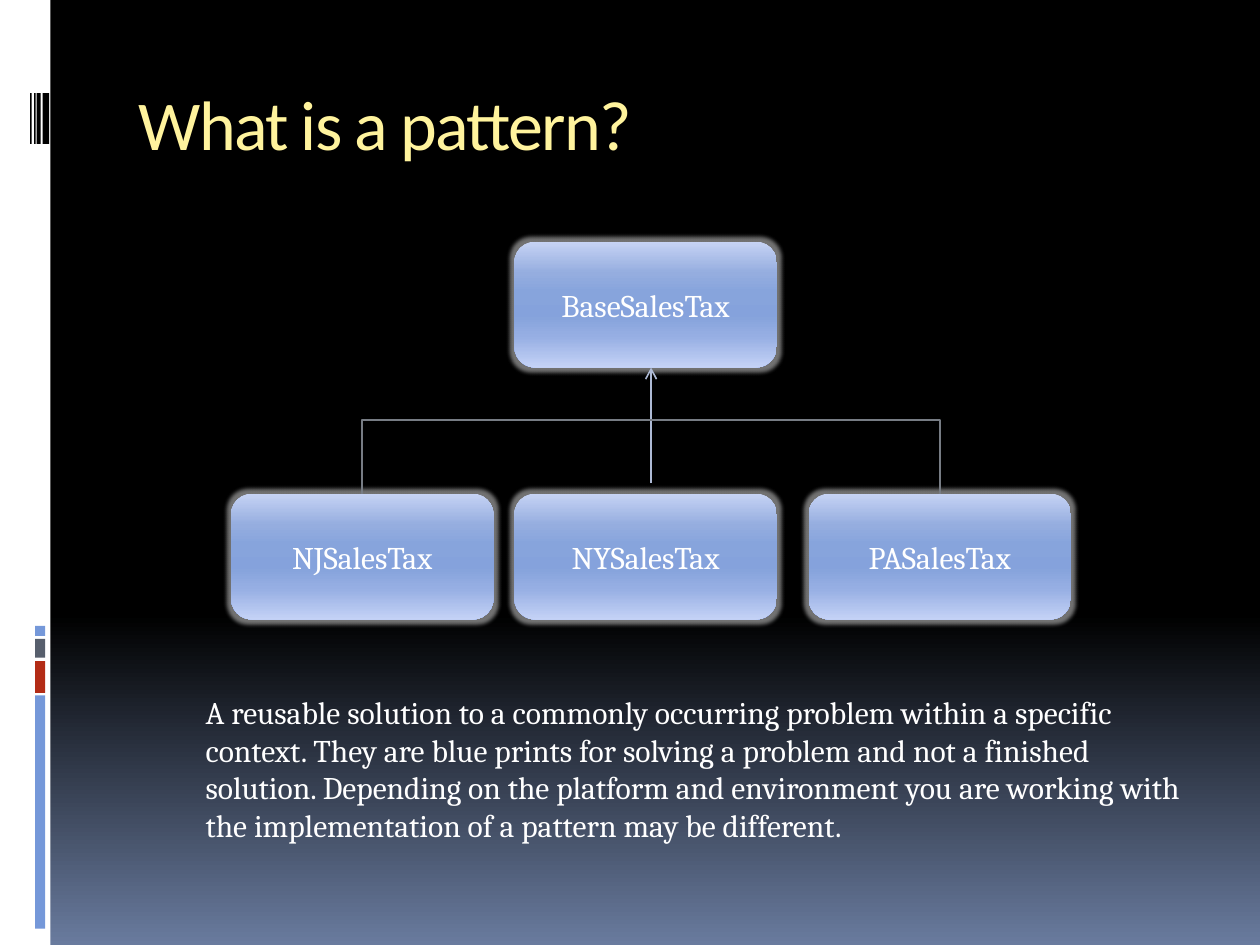
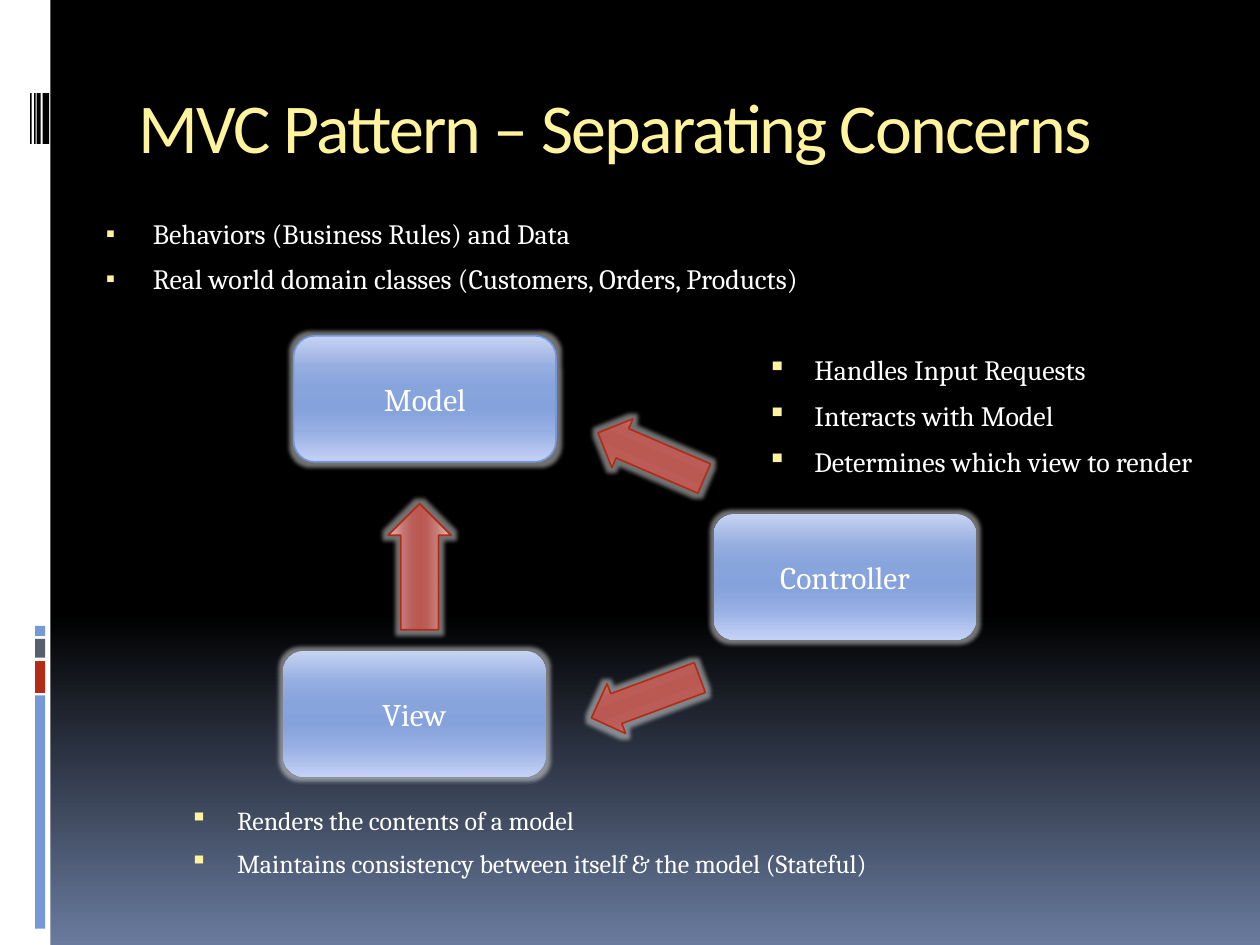
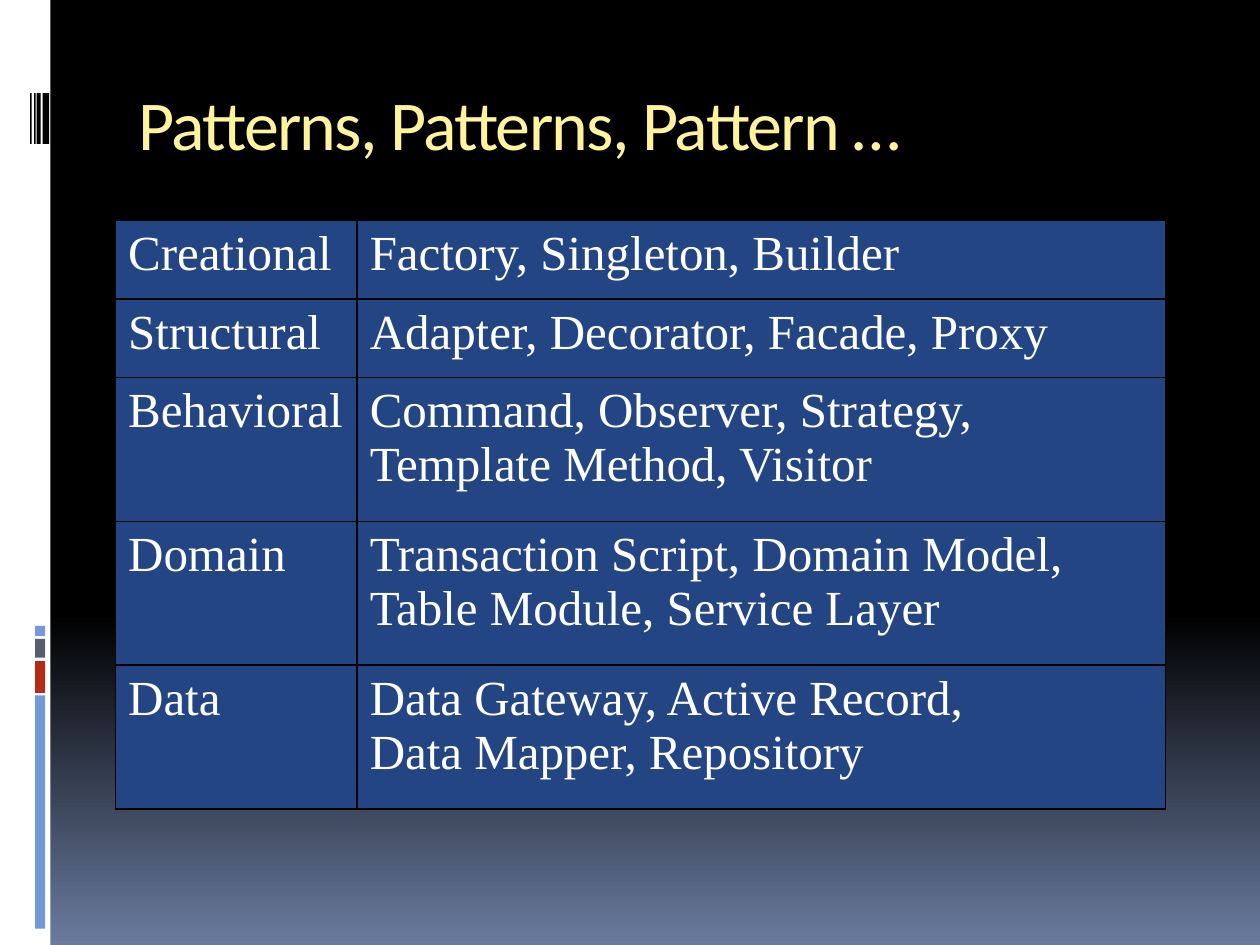
"""Build three slides on design patterns."""
from dataclasses import dataclass

from lxml.etree import SubElement
from pptx import Presentation
from pptx.dml.color import RGBColor as Rgb
from pptx.enum.shapes import MSO_CONNECTOR as Connector, MSO_SHAPE as Preset
from pptx.enum.text import MSO_ANCHOR as Anchor, MSO_AUTO_SIZE as AutoSize, PP_ALIGN as Align
from pptx.oxml.ns import qn
from pptx.util import Cm, Pt


@dataclass(frozen=True)
class Theme:
    """Colours, fonts and type sizes of the deck."""
    white: str = "FFFFFF"
    black: str = "000000"
    yellow: str = "FFF39D"
    blue: str = "7598D9"
    red: str = "B32C16"
    slate: str = "575F6D"
    cell: str = "244583"
    arrow_line: str = "AEBAD5"
    branch_line: str = "777C84"
    backdrop: tuple = ((0, "000000"), (65, "000000"), (100, "697B9E"))
    blue_gloss: tuple = ((0, "C6D3F4"), (25, "95ADDF"), (40, "87A4DC"), (50, "85A2DC"),
                         (60, "87A4DC"), (75, "96AEE3"), (100, "C4D2F6"))
    red_gloss: tuple = ((0, "E5BCBA"), (25, "C17471"), (40, "BB5C57"), (50, "BA5852"),
                        (60, "BB5C57"), (75, "C67874"), (100, "E6BAB9"))
    title_font: str = "Calibri"
    body_font: str = "Cambria"
    table_font: str = "Times New Roman"
    title_size: float = 40
    body_size: float = 18
    list_size: float = 16
    small_size: float = 14.8
    table_size: float = 28
    line_width: float = 0.94


@dataclass(frozen=True)
class Box:
    """A rectangle in centimetres."""
    left: float
    top: float
    width: float
    height: float

    def inner(self, left, top, width, height):
        """Return a box placed relative to this one."""
        return Box(self.left + left, self.top + top, width, height)

    def lengths(self):
        """Return left, top, width and height as lengths."""
        return Cm(self.left), Cm(self.top), Cm(self.width), Cm(self.height)


THEME = Theme()
PAGE = Box(0, 0, 25.4, 19.05)
NODE_WIDTH, NODE_HEIGHT = 5.29, 2.54


def add_node(parent, tag, **attributes):
    """Append an XML child with the given attributes."""
    return SubElement(parent, qn(tag), {key: str(value) for key, value in attributes.items()})


def write(frame, lines, font=THEME.body_font, size=THEME.body_size, color=THEME.white,
          align=Align.LEFT, anchor=Anchor.TOP, tracking=0, indent=0, bullet=None, before=0):
    """Fill a text frame with one formatted paragraph per line."""
    frame.word_wrap = True
    frame.vertical_anchor = anchor
    for index, line in enumerate(lines):
        paragraph = frame.add_paragraph() if index else frame.paragraphs[0]
        paragraph.alignment = align
        paragraph.space_before = Pt(before)
        properties = paragraph._p.get_or_add_pPr()
        properties.set("marL", str(Cm(indent)))
        properties.set("indent", str(Cm(-0.95 if bullet else 0)))
        if bullet:
            add_node(add_node(properties, "a:buClr"), "a:srgbClr", val=THEME.yellow)
            add_node(properties, "a:buSzPct", val=95000)
            add_node(properties, "a:buChar", char=bullet)
        else:
            add_node(properties, "a:buNone")
        run = paragraph.add_run()
        run.text = line
        run.font.name, run.font.size = font, Pt(size)
        run.font.color.rgb = Rgb.from_string(color)
        if tracking:
            run._r.get_or_add_rPr().set("spc", str(tracking * 100))


def fill_gradient(fill, element, stops):
    """Give a fill a vertical gradient with the given stops."""
    fill.gradient()
    fill.gradient_angle = 270
    stop_list = next(element.iter(qn("a:gsLst")))
    for stop in list(stop_list):
        stop_list.remove(stop)
    for position, color in stops:
        add_node(add_node(stop_list, "a:gs", pos=position * 1000), "a:srgbClr", val=color)


def add_bar(slide, box, color):
    """Add a plain coloured rectangle."""
    shape = slide.shapes.add_shape(Preset.RECTANGLE, *box.lengths())
    shape.shadow.inherit = False
    shape.fill.solid()
    shape.fill.fore_color.rgb = Rgb.from_string(color)
    shape.line.fill.background()
    return shape


def add_glossy(slide, preset, box, stops, outline=None):
    """Add a gradient shape with a soft white glow."""
    shape = slide.shapes.add_shape(preset, *box.lengths())
    fill_gradient(shape.fill, shape.element, stops)
    if outline:
        shape.line.color.rgb = Rgb.from_string(outline)
        shape.line.width = Pt(THEME.line_width)
    else:
        shape.line.fill.background()
    shape.shadow.inherit = False
    effects = shape.element.spPr.find(qn("a:effectLst"))
    glow = add_node(effects, "a:glow", rad=Pt(5))
    add_node(add_node(glow, "a:srgbClr", val=THEME.white), "a:alpha", val=45000)
    return shape


def add_class_node(slide, box, label, outline=None):
    """Add a labelled rounded blue node."""
    shape = add_glossy(slide, Preset.ROUNDED_RECTANGLE, box, THEME.blue_gloss, outline)
    write(shape.text_frame, [label], align=Align.CENTER, anchor=Anchor.MIDDLE)


def add_arrow(slide, box, rotation):
    """Add a rotated red block arrow."""
    shape = add_glossy(slide, Preset.RIGHT_ARROW, box, THEME.red_gloss, THEME.red)
    shape.adjustments[0], shape.adjustments[1] = 0.6, 0.5
    shape.rotation = rotation


def add_line(slide, kind, start, end, color):
    """Add a thin connector between two points."""
    line = slide.shapes.add_connector(kind, *map(Cm, start + end))
    line.line.color.rgb = Rgb.from_string(color)
    line.line.width = Pt(THEME.line_width)
    add_node(line.element.spPr, "a:effectLst")
    return line


def place(placeholder, box):
    """Move a placeholder into a box and return its text frame."""
    placeholder.left, placeholder.top, placeholder.width, placeholder.height = box.lengths()
    placeholder.text_frame.auto_size = AutoSize.NONE
    return placeholder.text_frame


def add_titled_slide(presentation, layout, title, top=1.42):
    """Add a slide and set its title."""
    slide = presentation.slides.add_slide(presentation.slide_layouts[layout])
    frame = place(slide.shapes.title, Box(2.54, top, 21.59, 2.54))
    frame.margin_top = Cm(0.2)
    write(frame, [title], font=THEME.title_font, size=THEME.title_size,
          color=THEME.yellow, tracking=-1)
    return slide


def write_bullets(frame, lines, size=THEME.list_size):
    """Write a list with square yellow bullets."""
    write(frame, lines, size=size, indent=1.14, bullet="▪", before=7)


def add_bullet_box(slide, box, lines, size=THEME.list_size):
    """Add a text box that holds a bulleted list."""
    write_bullets(slide.shapes.add_textbox(*box.lengths()).text_frame, lines, size)


def decorate_master(presentation, slide, box):
    """Set the backdrop and move the side band to the master."""
    master = presentation.slide_master
    fill_gradient(master.background.fill, master.element, THEME.backdrop)
    bars = [add_bar(slide, box.inner(0, 0, 1.02, box.height), THEME.white)]
    for top, height, color in ((14.02, 4.7, THEME.blue), (13.33, 0.64, THEME.red),
                               (12.88, 0.38, THEME.slate), (12.62, 0.2, THEME.blue)):
        bars.append(add_bar(slide, box.inner(0.71, top, 0.2, height), color))
    for left, width in ((0.86, 0.13), (0.74, 0.08), (0.69, 0.03), (0.61, 0.03)):
        bars.append(add_bar(slide, box.inner(left, 1.88, width, 1.02), THEME.black))
    for index, bar in enumerate(bars):
        bar.element.nvSpPr.cNvPr.set("id", str(100 + index))
        master.shapes.element.insert(2 + index, bar.element)


def add_hierarchy(slide, box, parent, children):
    """Draw a parent class above the classes that extend it."""
    offsets = (0, 5.71, 11.64)
    child_top = box.height - NODE_HEIGHT
    add_class_node(slide, box.inner(offsets[1], 0, NODE_WIDTH, NODE_HEIGHT), parent)
    for offset, child in zip(offsets, children):
        add_class_node(slide, box.inner(offset, child_top, NODE_WIDTH, NODE_HEIGHT), child)
    stem = box.left + box.width / 2
    arrow = add_line(slide, Connector.STRAIGHT, (stem, box.top + child_top - 0.21),
                     (stem, box.top + NODE_HEIGHT), THEME.arrow_line)
    add_node(arrow.element.spPr.find(qn("a:ln")), "a:tailEnd", type="arrow")
    for offset in (offsets[0], offsets[-1]):
        end = (box.left + offset + NODE_WIDTH / 2, box.top + child_top)
        branch = add_line(slide, Connector.ELBOW, (stem, box.top + 3.6), end, THEME.branch_line)
        branch.element.spPr.find(qn("a:prstGeom")).set("prst", "bentConnector2")


def add_triad(slide, box):
    """Draw model, view and controller with arrows between them."""
    for left, top, label, outline in ((0.21, 0, "Model", THEME.blue), (0, 6.35, "View", None),
                                      (8.68, 3.59, "Controller", None)):
        add_class_node(slide, box.inner(left, top, NODE_WIDTH, NODE_HEIGHT), label, outline)
    for left, top, width, height, rotation in ((6.25, 1.88, 2.33, 1.07, 203.3),
                                               (6.14, 6.76, 2.33, 1.07, 159.6),
                                               (1.48, 4.02, 2.54, 1.27, 270)):
        add_arrow(slide, box.inner(left, top, width, height), rotation)


def add_pattern_table(slide, box, rows):
    """Add a table of pattern families and their members."""
    table = slide.shapes.add_table(len(rows), 2, *box.lengths()).table
    table.first_row = table.horz_banding = False
    table.columns[0].width = Cm(4.87)
    table.columns[1].width = Cm(box.width - 4.87)
    for row, (family, members) in zip(table.rows, rows):
        row.height = Cm(1.58 if len(members) == 1 else 2.9)
        for cell, lines in zip(row.cells, ([family], members)):
            write(cell.text_frame, lines, font=THEME.table_font, size=THEME.table_size)
            properties = cell._tc.get_or_add_tcPr()
            for side in "LRTB":
                border = add_node(properties, f"a:ln{side}", w=Pt(1))
                add_node(add_node(border, "a:solidFill"), "a:srgbClr", val=THEME.black)
            cell.fill.solid()
            cell.fill.fore_color.rgb = Rgb.from_string(THEME.cell)


def build_definition(presentation):
    """Build the slide that defines a pattern."""
    slide = add_titled_slide(presentation, 1, "What is a pattern?")
    decorate_master(presentation, slide, PAGE)
    write(place(slide.placeholders[1], Box(2.75, 13.84, 21.59, 3.51)), [
        "A reusable solution to a commonly occurring problem within a specific context. "
        "They are blue prints for solving a problem and not a finished solution. "
        "Depending on the platform and environment you are working with the "
        "implementation of a pattern may be different."], indent=1.14, before=7)
    add_hierarchy(slide, Box(4.66, 4.87, 16.93, 7.62), "BaseSalesTax",
                  ("NJSalesTax", "NYSalesTax", "PASalesTax"))


def build_mvc(presentation):
    """Build the slide on the MVC pattern."""
    slide = add_titled_slide(presentation, 1, "MVC Pattern – Separating Concerns", top=1.48)
    write_bullets(place(slide.placeholders[1], Box(1.69, 4.23, 15.66, 2.12)), [
        "Behaviors (Business Rules) and Data",
        "Real world domain classes (Customers, Orders, Products)"])
    add_triad(slide, Box(5.71, 6.77, 13.97, 8.89))
    add_bullet_box(slide, Box(3.39, 16.09, 15.88, 2.12), [
        "Renders the contents of a model",
        "Maintains consistency between itself & the model (Stateful)"], THEME.small_size)
    add_bullet_box(slide, Box(15.03, 6.98, 9.95, 3.39), [
        "Handles Input Requests", "Interacts with Model", "Determines which view to render"])


def build_catalogue(presentation):
    """Build the slide that lists pattern families."""
    slide = add_titled_slide(presentation, 5, "Patterns, Patterns, Pattern …")
    add_pattern_table(slide, Box(2.33, 4.45, 21.17, 11.86), (
        ("Creational", ["Factory, Singleton, Builder"]),
        ("Structural", ["Adapter, Decorator, Facade, Proxy"]),
        ("Behavioral", ["Command, Observer, Strategy,", "Template Method, Visitor"]),
        ("Domain", ["Transaction Script, Domain Model,", "Table Module, Service Layer"]),
        ("Data", ["Data Gateway, Active Record,", "Data Mapper, Repository"])))


def main():
    """Build and save the presentation."""
    presentation = Presentation()
    presentation.slide_width, presentation.slide_height = Cm(PAGE.width), Cm(PAGE.height)
    build_definition(presentation)
    build_mvc(presentation)
    build_catalogue(presentation)
    presentation.save("out.pptx")


if __name__ == "__main__":
    main()
